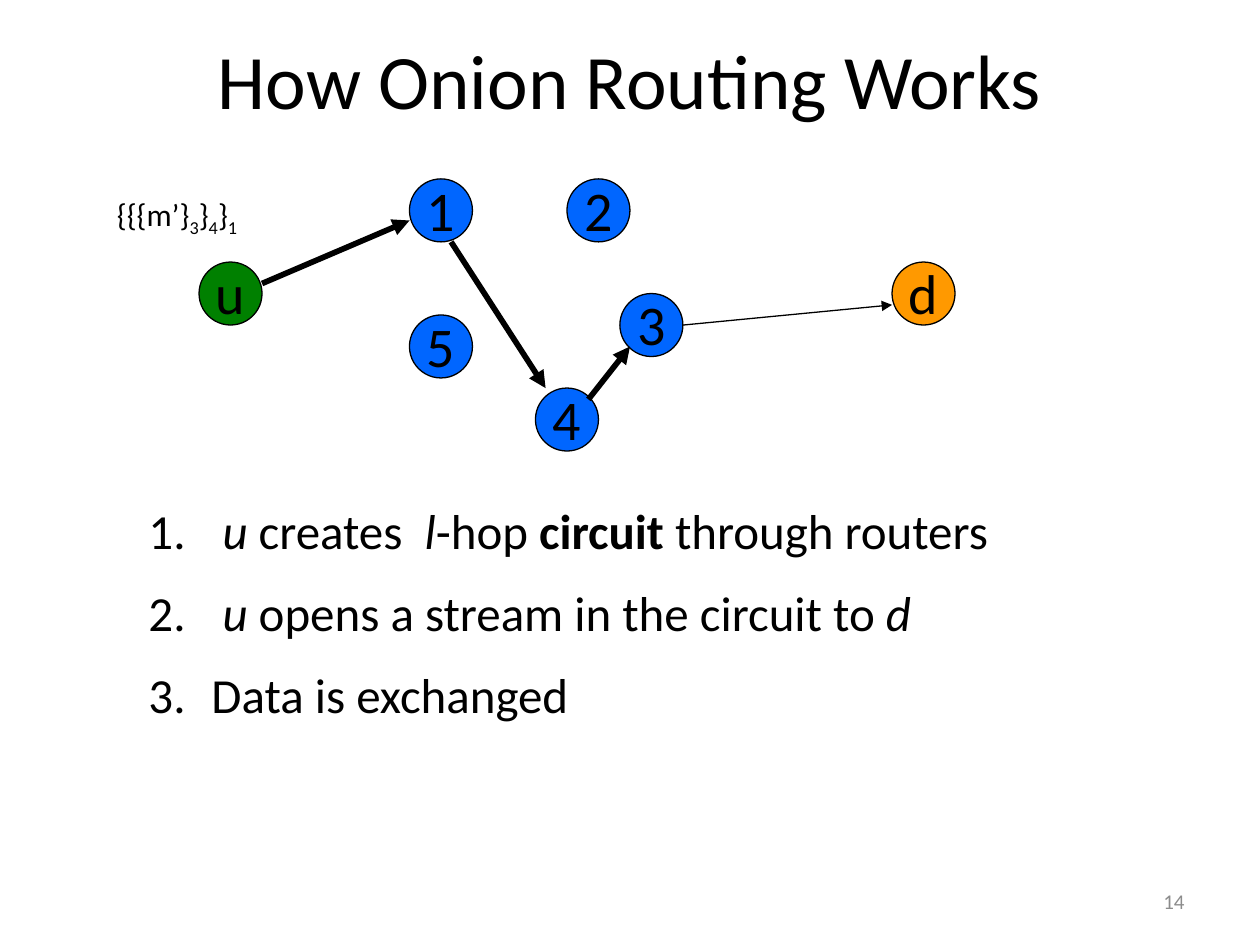
from dataclasses import dataclass

from lxml.etree import SubElement
from pptx import Presentation
from pptx.dml.color import RGBColor
from pptx.enum.shapes import MSO_CONNECTOR, MSO_SHAPE
from pptx.enum.text import MSO_ANCHOR, MSO_AUTO_SIZE, PP_ALIGN
from pptx.oxml.ns import qn
from pptx.util import Inches, Pt


@dataclass(frozen=True)
class Theme:
    """Font, colours and type sizes of the deck."""
    font: str = "Calibri"
    ink: str = "000000"
    muted: str = "8C8C8C"
    router: str = "0066FF"
    user: str = "008000"
    destination: str = "FF9900"
    title: int = 44
    node: int = 32
    body: int = 28
    message: int = 18
    footer: int = 12
    thin: float = 0.75
    thick: float = 3.25


class SlideBuilder:
    """Draws styled elements on the current slide."""

    def __init__(self, prs, theme):
        """Add a title-only slide to the presentation."""
        self.theme = theme
        self.s = prs.slides.add_slide(prs.slide_layouts[5])

    def style(self, p, size, color=None, align=PP_ALIGN.LEFT):
        """Format a whole paragraph."""
        p.alignment = align
        p.font.name = self.theme.font
        p.font.size = Pt(size)
        p.font.color.rgb = RGBColor.from_string(color or self.theme.ink)

    def runs(self, p, parts):
        """Add (text, style) runs, where style is i, b, sub or empty."""
        for text, kind in parts:
            r = p.add_run()
            r.text = text
            if kind == "i":
                r.font.italic = True
            elif kind == "b":
                r.font.bold = True
            elif kind == "sub":
                r._r.get_or_add_rPr().set("baseline", "-25000")

    def title(self, text, x, y, w, h):
        """Place and format the title placeholder."""
        sp = self.s.shapes.title
        sp.left, sp.top, sp.width, sp.height = map(Inches, (x, y, w, h))
        tf = sp.text_frame
        tf.text = text
        tf.vertical_anchor = MSO_ANCHOR.MIDDLE
        self.style(tf.paragraphs[0], self.theme.title, align=PP_ALIGN.CENTER)

    def text(self, parts, x, y, w, h, size, color=None, align=PP_ALIGN.LEFT,
             anchor=MSO_ANCHOR.TOP):
        """Add a one-paragraph text box."""
        tf = self.s.shapes.add_textbox(*map(Inches, (x, y, w, h))).text_frame
        tf.word_wrap = True
        tf.vertical_anchor = anchor
        p = tf.paragraphs[0]
        self.runs(p, parts)
        self.style(p, size, color, align)
        return tf

    def node(self, name, x, y, color, d=0.5):
        """Add a circle with its label."""
        sp = self.s.shapes.add_shape(MSO_SHAPE.OVAL, *map(Inches, (x, y, d, d)))
        sp.shadow.inherit = False
        sp.fill.solid()
        sp.fill.fore_color.rgb = RGBColor.from_string(color)
        sp.line.color.rgb = RGBColor.from_string(self.theme.ink)
        sp.line.width = Pt(self.theme.thin)
        self.text([(name, "")], x, y - 0.08, d, 0.63, self.theme.node,
                  align=PP_ALIGN.CENTER)

    def arrow(self, start, end, width):
        """Add a straight line with an arrowhead at its end."""
        c = self.s.shapes.add_connector(MSO_CONNECTOR.STRAIGHT,
                                        *map(Inches, start + end))
        c.line.color.rgb = RGBColor.from_string(self.theme.ink)
        c.line.width = Pt(width)
        SubElement(c.line._get_or_add_ln(), qn("a:tailEnd"), type="triangle")
        SubElement(c._element.spPr, qn("a:effectLst"))

    def numbered(self, items, x, y, w, h):
        """Add an automatically numbered list."""
        tf = self.text(items[0], x, y, w, h, self.theme.body)
        tf.auto_size = MSO_AUTO_SIZE.SHAPE_TO_FIT_TEXT
        for parts in items[1:]:
            p = tf.add_paragraph()
            self.runs(p, parts)
            self.style(p, self.theme.body)
            p.space_before = Pt(13.5)
        for p in tf.paragraphs:
            pPr = p._p.get_or_add_pPr()
            pPr.set("marL", str(Inches(0.5)))
            pPr.set("indent", str(Inches(-0.5)))
            bullet = pPr.makeelement(qn("a:buAutoNum"), {"type": "arabicPeriod"})
            pPr.insert_element_before(bullet, "a:tabLst", "a:defRPr", "a:extLst")


def main():
    """Build the onion routing slide."""
    theme = Theme()
    prs = Presentation()
    prs.slide_width, prs.slide_height = Inches(10), Inches(7.5)
    b = SlideBuilder(prs, theme)
    b.title("How Onion Routing Works", 0.75, 0, 8.5, 1.25)

    routers = [(3.25, 1.42), (4.5, 1.42), (4.92, 2.33), (4.25, 3.08), (3.25, 2.5)]
    for number, (x, y) in enumerate(routers, 1):
        b.node(str(number), x, y, theme.router)
    b.node("u", 1.58, 2.08, theme.user)
    b.node("d", 7.08, 2.08, theme.destination)

    circuit = [((2.08, 2.25), (3.25, 1.75)),
               ((3.58, 1.92), (4.33, 3.08)),
               ((4.67, 3.17), (5, 2.75))]
    for start, end in circuit:
        b.arrow(start, end, theme.thick)
    b.arrow((5.42, 2.58), (7.08, 2.42), theme.thin)

    b.text([("{{{m’}", ""), ("3", "sub"), ("}", ""), ("4", "sub"),
            ("}", ""), ("1", "sub")], 0.83, 1.5, 2, 0.5, theme.message)
    b.numbered([
        [(" ", ""), ("u", "i"), (" creates  ", ""), ("l", "i"), ("-hop ", ""),
         ("circuit", "b"), (" through routers", "")],
        [(" ", ""), ("u", "i"), (" opens a stream in the circuit to ", ""),
         ("d", "i")],
        [("Data is exchanged", "")],
    ], 1.08, 3.92, 7.58, 1.97)
    b.text([("14", "")], 7.17, 6.95, 2.33, 0.4, theme.footer, theme.muted,
           PP_ALIGN.RIGHT, MSO_ANCHOR.MIDDLE)
    prs.save("out.pptx")


if __name__ == "__main__":
    main()
